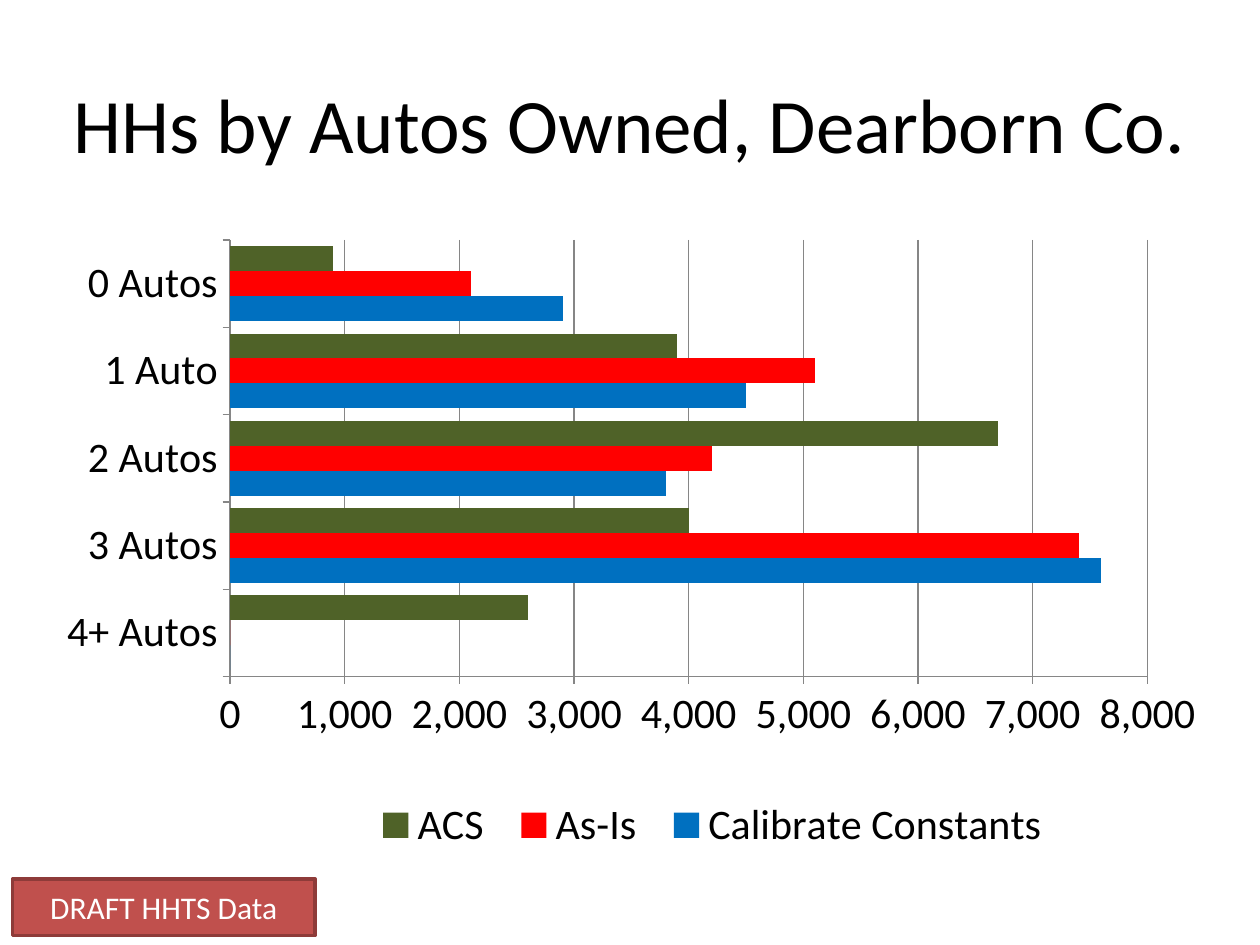
from lxml import etree
from pptx import Presentation
from pptx import util as u
from pptx.chart.data import CategoryChartData
from pptx.dml.color import RGBColor
from pptx.enum import chart as ch, shapes, text
from pptx.oxml.ns import qn

W, H = 10, 7.5
FONT = "Calibri"
COLORS = {"text": "000000", "light": "FFFFFF", "axis": "868686",
          "badge": "C0504D", "badge_line": "8E3B39"}
CATS = ["4+ Autos", "3 Autos", "2 Autos", "1 Auto", "0 Autos"]
SERIES = [
    ("Calibrate Constants", "0070C0", (0, 7600, 3800, 4500, 2900)),
    ("As-Is", "FF0000", (0, 7400, 4200, 5100, 2100)),
    ("ACS", "4F6228", (2600, 4000, 6700, 3900, 900)),
]


def rgb(value):
    """Return a colour from a hex string."""
    return RGBColor.from_string(value)


def box(x, y, w, h):
    """Turn shares of the slide's size into lengths."""
    return [u.Inches(v) for v in (x * W, y * H, w * W, h * H)]


def style_font(font, size, color="text"):
    """Set the typeface, size and colour of a font."""
    font.name, font.size = FONT, u.Pt(size)
    font.color.rgb = rgb(COLORS[color])


def put_text(sp, words, size=18, color="text"):
    """Write one centred line into a shape."""
    tf = sp.text_frame
    tf.word_wrap = True
    tf.vertical_anchor = text.MSO_ANCHOR.MIDDLE
    p = tf.paragraphs[0]
    p.alignment = text.PP_ALIGN.CENTER
    r = p.add_run()
    r.text = words
    style_font(r.font, size, color)


def set_layout(parent, before, inner=False, **shares):
    """Place a chart part by shares of the chart's size."""
    for old in parent.findall(qn("c:layout")):
        parent.remove(old)
    layout = etree.Element(qn("c:layout"))
    manual = etree.SubElement(layout, qn("c:manualLayout"))
    items = [("layoutTarget", "inner")] if inner else []
    items += [("xMode", "edge"), ("yMode", "edge"), *shares.items()]
    for tag, value in items:
        etree.SubElement(manual, qn(f"c:{tag}")).set("val", str(value))
    parent.find(qn(before)).addprevious(layout)


def style_axis(axis):
    """Give an axis its font, line and ticks."""
    style_font(axis.tick_labels.font, 24)
    axis.format.line.color.rgb = rgb(COLORS["axis"])
    axis.major_tick_mark = ch.XL_TICK_MARK.OUTSIDE
    axis.minor_tick_mark = ch.XL_TICK_MARK.NONE


def add_bars(s, area):
    """Add the clustered bar chart of households."""
    data = CategoryChartData(number_format="#,##0")
    data.categories = CATS
    for name, _, values in SERIES:
        data.add_series(name, values)
    chart = s.shapes.add_chart(ch.XL_CHART_TYPE.BAR_CLUSTERED, *area, data).chart
    chart.has_title = False
    style_font(chart.font, 10)
    plot = chart.plots[0]
    plot.gap_width, plot.overlap, plot.vary_by_categories = 50, 0, False
    for series, (_, color, _) in zip(plot.series, SERIES):
        series.format.fill.solid()
        series.format.fill.fore_color.rgb = rgb(color)
    style_axis(chart.category_axis)
    axis = chart.value_axis
    style_axis(axis)
    axis.minimum_scale, axis.maximum_scale, axis.major_unit = 0, 8000, 1000
    axis.tick_labels.number_format = "#,##0"
    axis.tick_labels.number_format_is_linked = False
    axis.has_major_gridlines = True
    axis.major_gridlines.format.line.color.rgb = rgb(COLORS["axis"])
    chart.has_legend = True
    legend = chart.legend
    legend.position = ch.XL_LEGEND_POSITION.BOTTOM
    legend.include_in_layout = False
    style_font(legend.font, 24)
    set_layout(plot._element.getparent(), "c:barChart", inner=True,
               x=0.16, y=0.02, w=0.78, h=0.66)
    set_layout(legend._element, "c:overlay", x=0.27, y=0.81, w=0.6, h=0.19)


def add_badge(s, words, area):
    """Add the outlined status label."""
    sp = s.shapes.add_shape(shapes.MSO_SHAPE.RECTANGLE, *area)
    sp.shadow.inherit = False
    sp.fill.solid()
    sp.fill.fore_color.rgb = rgb(COLORS["badge"])
    sp.line.color.rgb = rgb(COLORS["badge_line"])
    sp.line.width = u.Pt(2)
    put_text(sp, words, color="light")


def main():
    """Build and save the slide."""
    prs = Presentation()
    prs.slide_width, prs.slide_height = u.Inches(W), u.Inches(H)
    s = prs.slides.add_slide(prs.slide_layouts[6])
    margin = 1 / 30
    title = s.shapes.add_textbox(*box(margin, 0.05, 1 - 2 * margin, 0.16))
    put_text(title, "HHs by Autos Owned, Dearborn Co.", size=44)
    add_bars(s, box(margin, 0.24, 1 - 2 * margin, 0.7))
    add_badge(s, "DRAFT HHTS Data", box(0.01, 0.93, 0.24, 0.06))
    prs.save("out.pptx")


if __name__ == "__main__":
    main()
